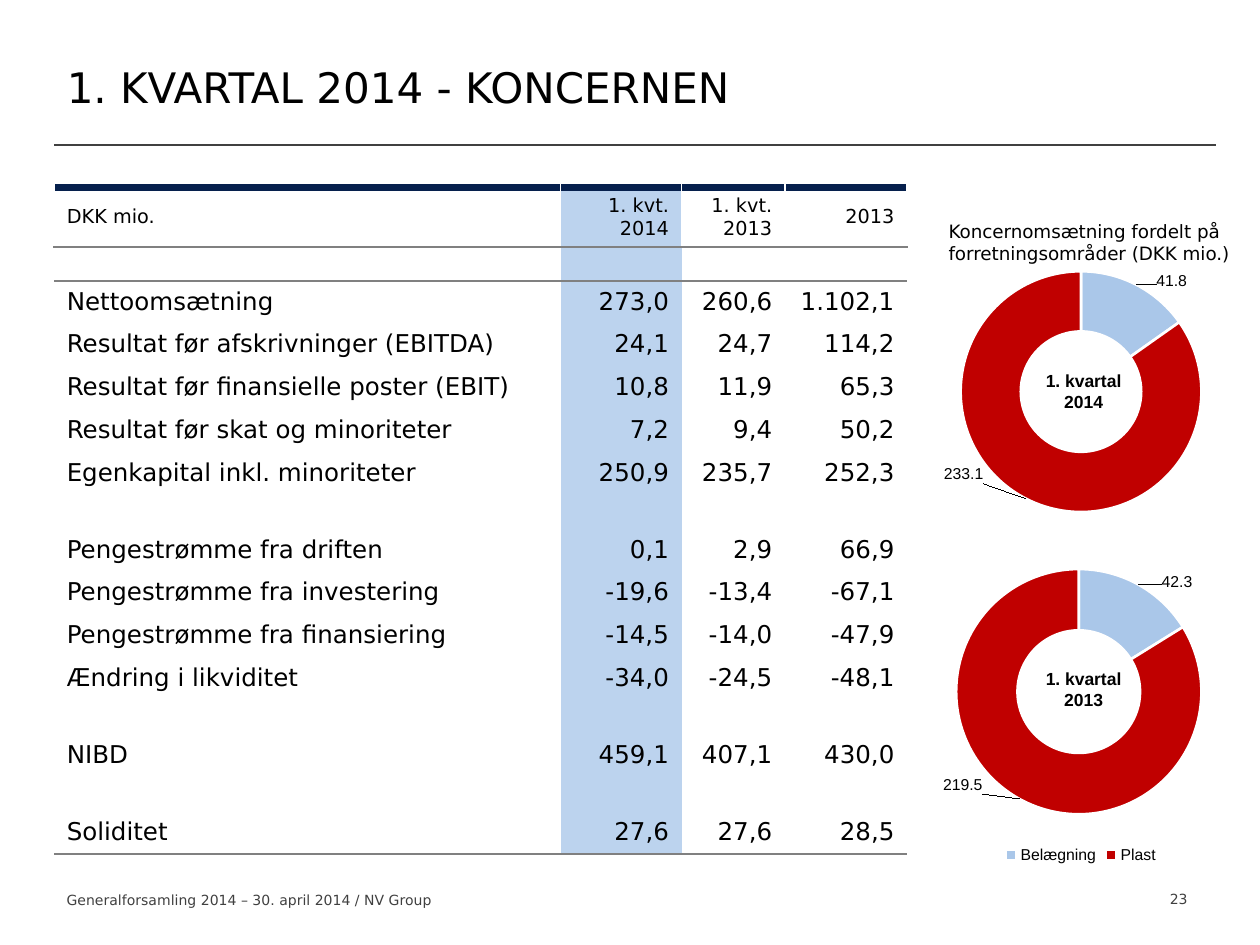
"""Build the first-quarter 2014 group results slide with a key figure table and two doughnuts."""
from lxml.etree import SubElement
from pptx import Presentation
from pptx.chart.data import CategoryChartData
from pptx.dml.color import RGBColor
from pptx.enum.chart import XL_CHART_TYPE, XL_LEGEND_POSITION
from pptx.enum.text import MSO_ANCHOR, PP_ALIGN
from pptx.oxml.ns import qn
from pptx.util import Inches, Pt

BLACK = RGBColor(0x00, 0x00, 0x00)
WHITE = RGBColor(0xFF, 0xFF, 0xFF)
DARK = RGBColor(0x40, 0x40, 0x40)
GRAY = RGBColor(0x80, 0x80, 0x80)
NAVY = RGBColor(0x06, 0x20, 0x4D)
HIGHLIGHT = RGBColor(0xBC, 0xD3, 0xEE)
COATING = RGBColor(0xAA, 0xC7, 0xE9)
PLASTIC = RGBColor(0xC0, 0x00, 0x00)
SANS = "DejaVu Sans"

HEADER = ("DKK mio.", "1. kvt. 2014", "1. kvt. 2013", "2013")
BLANK = ("", "", "", "")
ROWS = [
    HEADER,
    BLANK,
    ("Nettoomsætning", "273,0", "260,6", "1.102,1"),
    ("Resultat før afskrivninger (EBITDA)", "24,1", "24,7", "114,2"),
    ("Resultat før finansielle poster (EBIT)", "10,8", "11,9", "65,3"),
    ("Resultat før skat og minoriteter", "7,2", "9,4", "50,2"),
    ("Egenkapital inkl. minoriteter", "250,9", "235,7", "252,3"),
    BLANK,
    ("Pengestrømme fra driften", "0,1", "2,9", "66,9"),
    ("Pengestrømme fra investering", "-19,6", "-13,4", "-67,1"),
    ("Pengestrømme fra finansiering", "-14,5", "-14,0", "-47,9"),
    ("Ændring i likviditet", "-34,0", "-24,5", "-48,1"),
    BLANK,
    ("NIBD", "459,1", "407,1", "430,0"),
    BLANK,
    ("Soliditet", "27,6", "27,6", "28,5"),
]
DOUGHNUTS = [
    dict(year="2014", values=(41.8, 233.1), top=2.02, height=2.2, caption_top=2.89,
         plot=(0.23, 0.06, 0.54, 0.87), offsets=((0.11, -0.11), (-0.17, 0.01)), legend=False),
    dict(year="2013", values=(42.3, 219.5), top=4.36, height=2.54, caption_top=5.25,
         plot=(0.22, 0.06, 0.55, 0.77), offsets=((0.12, -0.09), (-0.16, 0.04)), legend=True),
]


def write(frame, lines, size, color=BLACK, font=SANS, bold=False, align=PP_ALIGN.LEFT):
    for i, line in enumerate(lines):
        paragraph = frame.add_paragraph() if i else frame.paragraphs[0]
        paragraph.alignment = align
        run = paragraph.add_run()
        run.text = line
        run.font.size, run.font.name, run.font.bold = Pt(size), font, bold
        run.font.color.rgb = color


def place(parent, index, **settings):
    layout = SubElement(parent, qn("c:layout"))
    parent.insert(index, layout)
    manual = SubElement(layout, qn("c:manualLayout"))
    for tag, value in settings.items():
        SubElement(manual, qn(f"c:{tag}"), val=str(value))


prs = Presentation()
prs.slide_width, prs.slide_height = Inches(10), Inches(7.5)
slide = prs.slides.add_slide(prs.slide_layouts[5])
shapes = slide.shapes

title = shapes.title
title.left, title.top, title.width, title.height = (Inches(v) for v in (0.43, 0.22, 8.58, 0.93))
title.text_frame.vertical_anchor = MSO_ANCHOR.MIDDLE
write(title.text_frame, ["1. KVARTAL 2014 - KONCERNEN"], 24)

rule = shapes.add_connector(1, Inches(0.43), Inches(1.15), Inches(9.65), Inches(1.15))
rule.line.color.rgb = DARK
rule.line.width = Pt(1.25)
SubElement(rule._element.spPr, qn("a:effectLst"))

for text, size, color, align, box in (
    ("23", 8, DARK, PP_ALIGN.CENTER, (8.94, 7.02, 0.83, 0.23)),
    ("Generalforsamling 2014 – 30. april 2014 / NV Group", 8, DARK, PP_ALIGN.LEFT,
     (0.43, 7.03, 4.02, 0.24)),
    ("Koncernomsætning fordelt på forretningsområder (DKK mio.)", 10.5, BLACK, PP_ALIGN.LEFT,
     (7.43, 1.7, 2.52, 0.47)),
):
    frame = shapes.add_textbox(*(Inches(v) for v in box)).text_frame
    frame.word_wrap = True
    write(frame, [text], size, color, align=align)

table_frame = shapes.add_table(len(ROWS), len(HEADER), Inches(0.43), Inches(1.49),
                               Inches(6.77), Inches(5.29))
key_figures = table_frame.table
key_figures.first_row = key_figures.horz_banding = False
key_figures._tbl.tblPr.find(qn("a:tableStyleId")).text = "{2D5ABB26-0587-4C30-8999-92F81FD0307C}"
for column, width in zip(key_figures.columns, (4.02, 0.96, 0.82, 0.97)):
    column.width = Inches(width)

last = len(ROWS) - 1
for r, values in enumerate(ROWS):
    key_figures.rows[r].height = Inches(0.47 if r == 0 else 0.34 if values[0] else 0.27)
    borders = []
    if r == 0:
        borders = [("lnL", WHITE, 1), ("lnR", WHITE, 1), ("lnT", NAVY, 4.5), ("lnB", GRAY, 1)]
    elif r == 1:
        borders = [("lnT", GRAY, 1)]
    elif r == last:
        borders = [("lnB", GRAY, 1)]
    for c, value in enumerate(values):
        cell = key_figures.cell(r, c)
        tc_pr = cell._tc.get_or_add_tcPr()
        for side, color, width in borders:
            line = SubElement(tc_pr, qn(f"a:{side}"), w=str(Pt(width)))
            SubElement(SubElement(line, qn("a:solidFill")), qn("a:srgbClr"), val=str(color))
        if c == 1:
            cell.fill.solid()
            cell.fill.fore_color.rgb = HIGHLIGHT
        else:
            cell.fill.background()
        cell.vertical_anchor = MSO_ANCHOR.TOP if r else MSO_ANCHOR.MIDDLE
        if value:
            write(cell.text_frame, [value], 14 if r else 11,
                  align=PP_ALIGN.RIGHT if c else PP_ALIGN.LEFT)
        else:
            SubElement(cell.text_frame.paragraphs[0]._p, qn("a:endParaRPr"), sz="800")

for doughnut in DOUGHNUTS:
    sales = CategoryChartData()
    sales.categories = ("Belægning", "Plast")
    sales.add_series("Omsætning", doughnut["values"])
    chart = shapes.add_chart(XL_CHART_TYPE.DOUGHNUT, Inches(6.81), Inches(doughnut["top"]),
                             Inches(3.54), Inches(doughnut["height"]), sales).chart
    chart.has_title = False
    chart.font.size, chart.font.name = Pt(9), "Arial"
    chart.font.color.rgb = BLACK
    chart.has_legend = doughnut["legend"]
    if chart.has_legend:
        chart.legend.position = XL_LEGEND_POSITION.BOTTOM
        chart.legend.include_in_layout = False

    plot_area = chart._chartSpace.chart.plotArea
    for automatic in plot_area.findall(qn("c:layout")):
        plot_area.remove(automatic)
    x, y, w, h = doughnut["plot"]
    place(plot_area, 0, layoutTarget="inner", xMode="edge", yMode="edge", x=x, y=y, w=w, h=h)

    plot = chart.plots[0]
    plot.vary_by_categories = True
    plot._element.find(qn("c:holeSize")).set("val", "60")
    series = plot.series[0]
    for i, color in enumerate((COATING, PLASTIC)):
        point = series.points[i]
        point.format.fill.solid()
        point.format.fill.fore_color.rgb = color
        point.format.line.color.rgb = WHITE
        point.format.line.width = Pt(1.5)
        label_font = point.data_label.font
        label_font.size, label_font.name = Pt(9), "Arial"
    for label, (dx, dy) in zip(series._element.iter(qn("c:dLbl")), doughnut["offsets"]):
        place(label, 1, x=dx, y=dy)

    caption = shapes.add_textbox(Inches(8.18), Inches(doughnut["caption_top"]),
                                 Inches(0.84), Inches(0.44)).text_frame
    caption.word_wrap = False
    write(caption, ["1. kvartal", doughnut["year"]], 10, font="Arial", bold=True,
          align=PP_ALIGN.CENTER)

prs.save("out.pptx")
